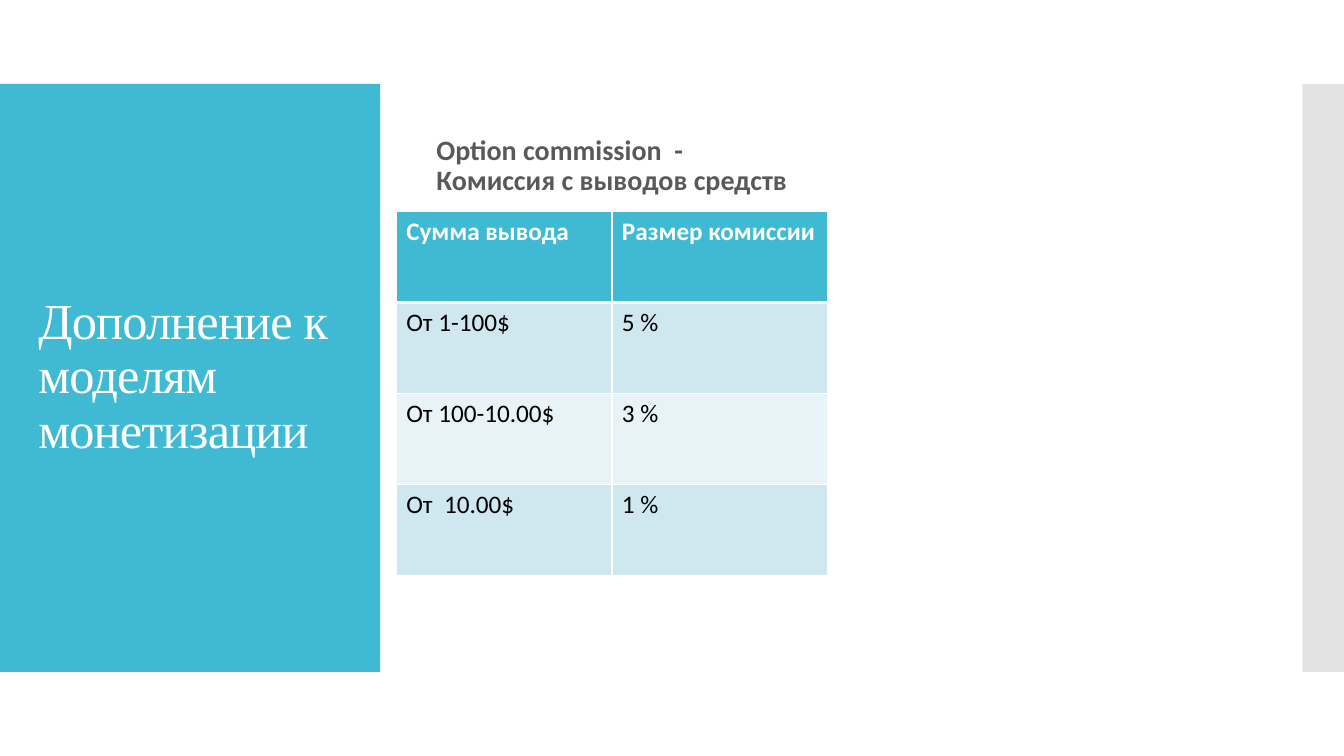
"""Build the slide on withdrawal commissions as an addition to the monetization models."""
from dataclasses import dataclass

from lxml.etree import SubElement
from pptx import Presentation
from pptx.dml.color import RGBColor
from pptx.enum.shapes import MSO_SHAPE as Shape
from pptx.enum.text import MSO_ANCHOR as Anchor
from pptx.oxml import parse_xml
from pptx.oxml.ns import nsdecls, qn
from pptx.util import Inches, Pt

WIDTH, HEIGHT = Inches(13.333), Inches(7.5)
COLORS = {"accent": "40BAD2", "strip": "C8C8C8", "white": "FFFFFF", "gray": "595959",
          "black": "000000", "band_dark": "CFE7EE", "band_light": "E8F3F7"}
ROWS = [("Сумма вывода", "Размер комиссии"), ("От 1-100$", "5 %"),
        ("От 100-10.00$", "3 %"), ("От  10.00$", "1 %")]


@dataclass
class Box:
    """A rectangle in percent of the slide's width and height."""
    left: float
    top: float
    width: float
    height: float

    def emu(self) -> tuple[int, int, int, int]:
        return (int(WIDTH * self.left / 100), int(HEIGHT * self.top / 100),
                int(WIDTH * self.width / 100), int(HEIGHT * self.height / 100))


@dataclass
class Panel:
    box: Box
    color: str
    opacity: int


PANELS = [Panel(Box(0, 11.11, 28.28, 77.78), "accent", 100),
          Panel(Box(96.9, 11.11, 3.1, 77.78), "strip", 50)]
TITLE_BOX = Box(2.1, 16.4, 24.15, 67.07)
CAPTION_BOX = Box(31.73, 14.93, 28.5, 11.73)
TABLE_BOX = Box(29.48, 28, 32.1, 48.13)


def rgb(name: str) -> RGBColor:
    return RGBColor.from_string(COLORS[name])


def set_font(p, name: str, size: int, color: str, bold: bool = False) -> None:
    p.font.name, p.font.size, p.font.bold = name, Pt(size), bold
    p.font.color.rgb = rgb(color)


def add_panel(s, panel: Panel) -> None:
    sp = s.shapes.add_shape(Shape.RECTANGLE, *panel.box.emu())
    sp.shadow.inherit = False
    sp.fill.solid()
    sp.fill.fore_color.rgb = rgb(panel.color)
    sp.line.fill.background()
    if panel.opacity < 100:
        clr = sp.element.spPr.find(qn("a:solidFill"))[0]
        SubElement(clr, qn("a:alpha")).set("val", str(panel.opacity * 1000))


def set_text(sp, text: str, anchor: Anchor):
    tf = sp.text_frame
    tf.word_wrap, tf.vertical_anchor = True, anchor
    p = tf.paragraphs[0]
    p.line_spacing = 0.9
    p.add_run().text = text
    return p


def set_title(s, text: str) -> None:
    sp = s.shapes.title
    sp.left, sp.top, sp.width, sp.height = TITLE_BOX.emu()
    sp.element.getparent().append(sp.element)
    p = set_text(sp, text, Anchor.MIDDLE)
    p.alignment = 1
    set_font(p, "Times New Roman", 36, "white")
    p.runs[0].font._element.set("spc", "-60")


def add_caption(s, text: str) -> None:
    sp = s.shapes.add_textbox(*CAPTION_BOX.emu())
    set_font(set_text(sp, text, Anchor.BOTTOM), "Calibri", 20, "gray", True)


def set_borders(cell, widths: dict[str, int]) -> None:
    tcPr = cell._tc.get_or_add_tcPr()
    for i, (side, width) in enumerate(widths.items()):
        tcPr.insert(i, parse_xml(
            f'<a:ln{side} {nsdecls("a")} w="{Pt(width)}"><a:solidFill>'
            f'<a:srgbClr val="{COLORS["white"]}"/></a:solidFill></a:ln{side}>'))


def add_rates(s) -> None:
    table = s.shapes.add_table(len(ROWS), len(ROWS[0]), *TABLE_BOX.emu()).table
    for i, row in enumerate(ROWS):
        header = i == 0
        fill = "accent" if header else "band_dark" if i % 2 else "band_light"
        for j, text in enumerate(row):
            cell = table.cell(i, j)
            cell.text = text
            cell.fill.solid()
            cell.fill.fore_color.rgb = rgb(fill)
            set_font(cell.text_frame.paragraphs[0], "Calibri", 18,
                     "white" if header else "black", header)
            set_borders(cell, {"L": 1, "R": 1, "T": 3 if i == 1 else 1,
                               "B": 3 if header else 1})


def main() -> None:
    prs = Presentation()
    prs.slide_width, prs.slide_height = WIDTH, HEIGHT
    s = prs.slides.add_slide(prs.slide_layouts[5])
    for panel in PANELS:
        add_panel(s, panel)
    set_title(s, "Дополнение к моделям монетизации")
    add_caption(s, "Option commission  - Комиссия c выводов средств")
    add_rates(s)
    prs.save("out.pptx")


if __name__ == "__main__":
    main()
